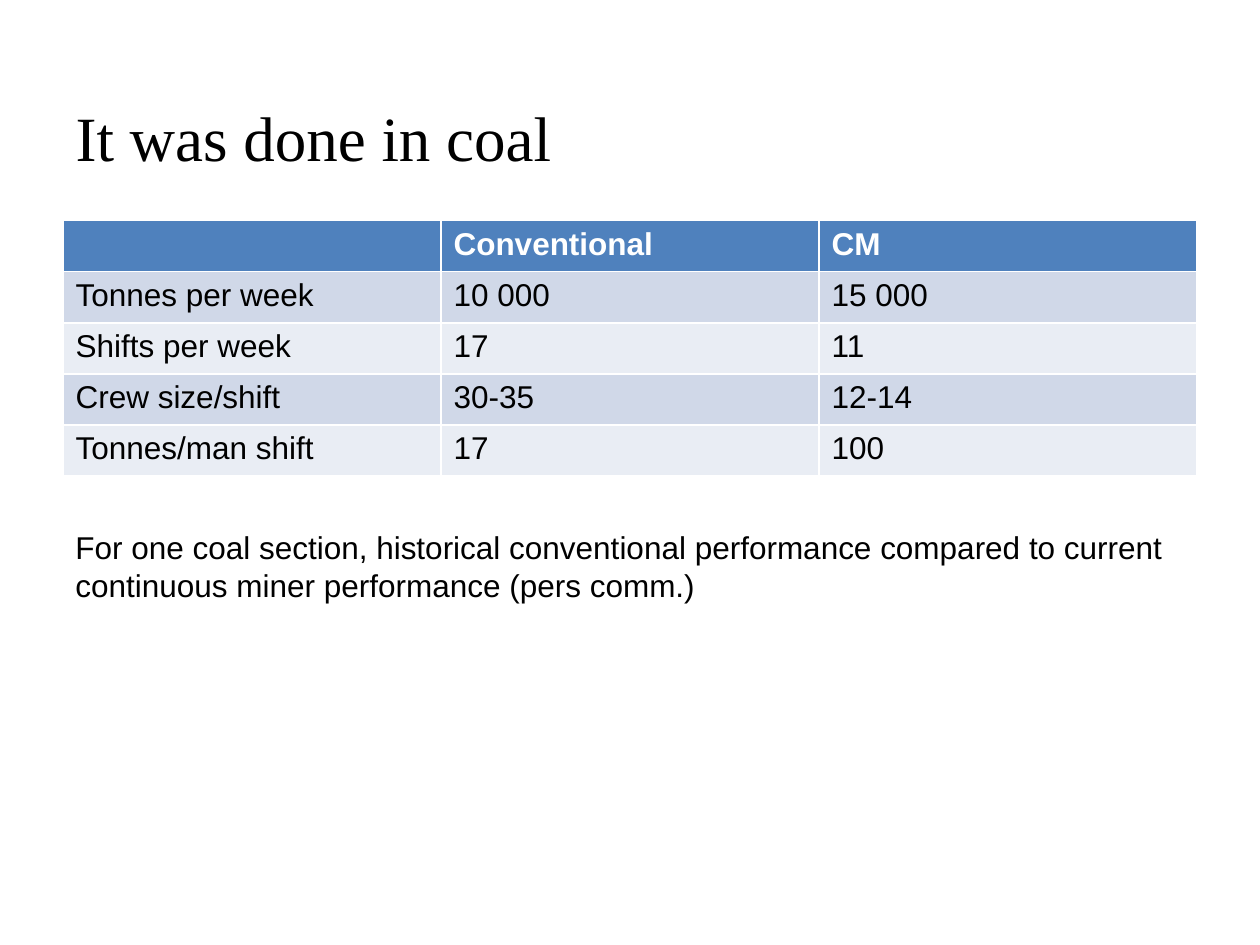
"""Build a slide comparing conventional and continuous miner coal performance."""
from pptx import Presentation
from pptx import util as u
from pptx.dml import color
from pptx.enum import text

COLOURS = {"header": "4F81BD", "odd": "D0D8E8", "even": "E9EDF4",
           "white": "FFFFFF", "black": "000000"}
ROWS = [
    ["", "Conventional", "CM"],
    ["Tonnes per week", "10 000", "15 000"],
    ["Shifts per week", "17", "11"],
    ["Crew size/shift", "30-35", "12-14"],
    ["Tonnes/man shift", "17", "100"],
]
NOTE = [
    "For one coal section, historical conventional performance compared to current",
    "continuous miner performance (pers comm.)",
]


def format_spans(frame, size, colour="black", name="Arial", bold=False):
    for para in frame.paragraphs:
        for span in para.runs:
            span.font.size = u.Pt(size)
            span.font.name = name
            span.font.bold = bold
            span.font.color.rgb = color.RGBColor.from_string(COLOURS[colour])


deck = Presentation()
deck.slide_width, deck.slide_height = u.Inches(10), u.Inches(7.5)
page = deck.slides.add_slide(deck.slide_layouts[5])

title = page.shapes.title
title.left, title.top = u.Inches(0.5), u.Inches(0.68)
title.width, title.height = u.Inches(9), u.Inches(0.8)
title.text_frame.text = "It was done in coal"
title.text_frame.vertical_anchor = text.MSO_ANCHOR.MIDDLE
title.text_frame.paragraphs[0].alignment = text.PP_ALIGN.LEFT
format_spans(title.text_frame, 36, name="Times New Roman")

table = page.shapes.add_table(len(ROWS), len(ROWS[0]), u.Inches(0.5), u.Inches(1.75),
                              u.Inches(9), u.Inches(2.03)).table
for row, values in enumerate(ROWS):
    header = row == 0
    fill = "header" if header else "odd" if row % 2 else "even"
    for column, value in enumerate(values):
        cell = table.cell(row, column)
        cell.fill.solid()
        cell.fill.fore_color.rgb = color.RGBColor.from_string(COLOURS[fill])
        cell.text_frame.text = value
        format_spans(cell.text_frame, 18, "white" if header else "black", bold=header)

box = page.shapes.add_textbox(u.Inches(0.5), u.Inches(4.14), u.Inches(8.92), u.Inches(0.71))
box.text_frame.word_wrap = False
box.text_frame.auto_size = text.MSO_AUTO_SIZE.SHAPE_TO_FIT_TEXT
box.text_frame.text = "\n".join(NOTE)
format_spans(box.text_frame, 18)

deck.save("out.pptx")
